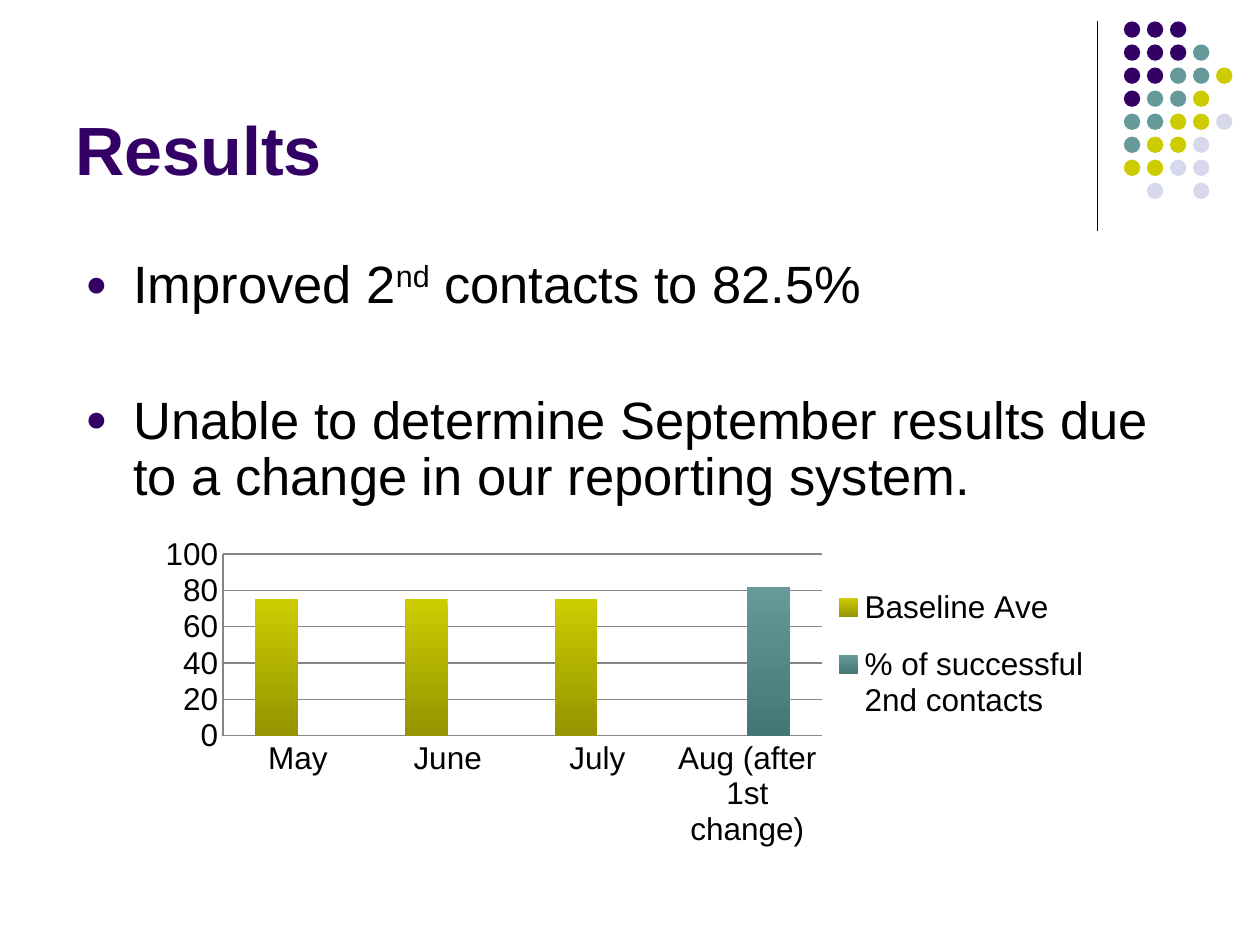
from dataclasses import dataclass
from lxml.etree import SubElement
from pptx import Presentation
from pptx.chart.data import CategoryChartData
from pptx.dml.color import RGBColor
from pptx.enum.chart import XL_CHART_TYPE, XL_LEGEND_POSITION, XL_TICK_MARK
from pptx.enum.shapes import MSO_CONNECTOR, MSO_SHAPE
from pptx.enum.text import MSO_ANCHOR
from pptx.oxml import parse_xml
from pptx.oxml.ns import nsdecls, qn
from pptx.util import Inches, Pt


@dataclass(frozen=True)
class Theme:
    font: str = "Arial"
    purple: str = "330066"
    teal: str = "669999"
    olive: str = "CCCC00"
    pale: str = "D8D8EC"
    black: str = "000000"
    grid: str = "868686"
    dark_teal: str = "457676"
    dark_olive: str = "949400"
    title_size: int = 39
    body_size: int = 30
    chart_size: int = 18


THEME = Theme()
DOT_ROWS = ["PPP", "PPPT", "PPTTO", "PTTO", "TTOOL", "TOOL", "OOLL", " L L"]
DOT_COLORS = {"P": THEME.purple, "T": THEME.teal, "O": THEME.olive, "L": THEME.pale}
DOT_LEFT, DOT_TOP, DOT_SIZE, DOT_PITCH = 8.92, 0.17, 0.13, 1.28 / 7
BULLETS = [
    ([("Improved 2", False), ("nd", True), (" contacts to 82.5%", False)], 6),
    ([("Unable to determine September results due to a change in our reporting system.", False)], 45),
]
CATEGORIES = ["May", "June", "July", "Aug (after 1st change)"]
SERIES = [
    ("Baseline Ave", [75, 75, 75, None], THEME.olive, THEME.dark_olive),
    ("% of successful 2nd contacts", [None, None, None, 82], THEME.teal, THEME.dark_teal),
]


def rgb(color):
    return RGBColor.from_string(color)


def style_font(font, size, color, bold=False):
    font.name = THEME.font
    font.size = Pt(size)
    font.bold = bold
    font.color.rgb = rgb(color)


def add_divider(slide):
    x = Inches(8.71)
    line = slide.shapes.add_connector(MSO_CONNECTOR.STRAIGHT, x, Inches(0.17), x, Inches(1.83))
    line.line.color.rgb = rgb(THEME.black)
    line.line.width = Pt(0.75)
    SubElement(line._element.spPr, qn("a:effectLst"))


def add_dots(slide):
    group = slide.shapes.add_group_shape()
    for row, codes in enumerate(DOT_ROWS):
        for column, code in enumerate(codes):
            if code not in DOT_COLORS:
                continue
            dot = group.shapes.add_shape(
                MSO_SHAPE.OVAL,
                Inches(DOT_LEFT + column * DOT_PITCH), Inches(DOT_TOP + row * DOT_PITCH),
                Inches(DOT_SIZE), Inches(DOT_SIZE),
            )
            dot.shadow.inherit = False
            dot.fill.solid()
            dot.fill.fore_color.rgb = rgb(DOT_COLORS[code])
            dot.line.fill.background()


def add_text_frame(slide, left, top, width, height, anchor):
    box = slide.shapes.add_textbox(Inches(left), Inches(top), Inches(width), Inches(height))
    box.text_frame.word_wrap = True
    box.text_frame.vertical_anchor = anchor
    return box.text_frame


def add_title(slide, text):
    frame = add_text_frame(slide, 0.5, 0.13, 8.25, 1.42, MSO_ANCHOR.BOTTOM)
    frame.text = text
    style_font(frame.paragraphs[0].runs[0].font, THEME.title_size, THEME.purple, bold=True)


def set_bullet(paragraph):
    properties = paragraph._p.get_or_add_pPr()
    properties.set("marL", str(Inches(0.38)))
    properties.set("indent", str(-Inches(0.38)))
    color = SubElement(properties, qn("a:buClr"))
    SubElement(color, qn("a:srgbClr"), val=THEME.purple)
    SubElement(properties, qn("a:buSzPct"), val="70000")
    SubElement(properties, qn("a:buFont"), typeface=THEME.font)
    SubElement(properties, qn("a:buChar"), char="●")


def add_bullets(slide):
    frame = add_text_frame(slide, 0.58, 2, 9, 2.25, MSO_ANCHOR.TOP)
    for index, (pieces, space_before) in enumerate(BULLETS):
        paragraph = frame.add_paragraph() if index else frame.paragraphs[0]
        paragraph.line_spacing = 0.9
        paragraph.space_before = Pt(space_before)
        set_bullet(paragraph)
        for text, raised in pieces:
            run = paragraph.add_run()
            run.text = text
            style_font(run.font, THEME.body_size, THEME.black)
            if raised:
                run.font._element.set("baseline", "30000")


def place_before(following, x, y, width, height, inner=False):
    parent = following.getparent()
    for old in parent.findall(qn("c:layout")):
        parent.remove(old)
    layout = parse_xml(f"<c:layout {nsdecls('c')}><c:manualLayout/></c:layout>")
    manual = layout[0]
    if inner:
        SubElement(manual, qn("c:layoutTarget"), val="inner")
    for name in ("xMode", "yMode"):
        SubElement(manual, qn(f"c:{name}"), val="edge")
    for name, share in zip("xywh", (x, y, width, height)):
        SubElement(manual, qn(f"c:{name}"), val=str(share))
    following.addprevious(layout)


def style_axes(chart):
    for axis in (chart.category_axis, chart.value_axis):
        axis.major_tick_mark = axis.minor_tick_mark = XL_TICK_MARK.NONE
        axis.format.line.color.rgb = rgb(THEME.grid)
    values = chart.value_axis
    values.minimum_scale, values.maximum_scale, values.major_unit = 0, 100, 20
    values.has_major_gridlines = True
    values.major_gridlines.format.line.color.rgb = rgb(THEME.grid)


def style_series(series, color, dark_color):
    fill = series.format.fill
    fill.gradient()
    fill.gradient_angle = 270
    for stop, stop_color in zip(fill.gradient_stops, (color, dark_color)):
        stop.color.rgb = rgb(stop_color)


def add_results_chart(slide):
    data = CategoryChartData()
    data.categories = CATEGORIES
    for name, values, _, _ in SERIES:
        data.add_series(name, values)
    chart = slide.shapes.add_chart(
        XL_CHART_TYPE.COLUMN_CLUSTERED,
        Inches(1.08), Inches(4.17), Inches(7.67), Inches(2.83), data,
    ).chart
    chart.has_title = False
    style_font(chart.font, THEME.chart_size, THEME.black)
    style_axes(chart)
    plot = chart.plots[0]
    plot.gap_width = 150
    plot.vary_by_categories = False
    for series, (_, _, color, dark_color) in zip(plot.series, SERIES):
        style_series(series, color, dark_color)
    chart.has_legend = True
    legend = chart.legend
    legend.position = XL_LEGEND_POSITION.RIGHT
    legend.include_in_layout = False
    place_before(plot._element, 0.09, 0.08, 0.62, 0.51, inner=True)
    place_before(legend._element.find(qn("c:overlay")), 0.73, 0.12, 0.26, 0.48)


def main():
    presentation = Presentation()
    presentation.slide_width, presentation.slide_height = Inches(10), Inches(7.5)
    slide = presentation.slides.add_slide(presentation.slide_layouts[6])
    add_divider(slide)
    add_dots(slide)
    add_title(slide, "Results")
    add_bullets(slide)
    add_results_chart(slide)
    presentation.save("out.pptx")


if __name__ == "__main__":
    main()
